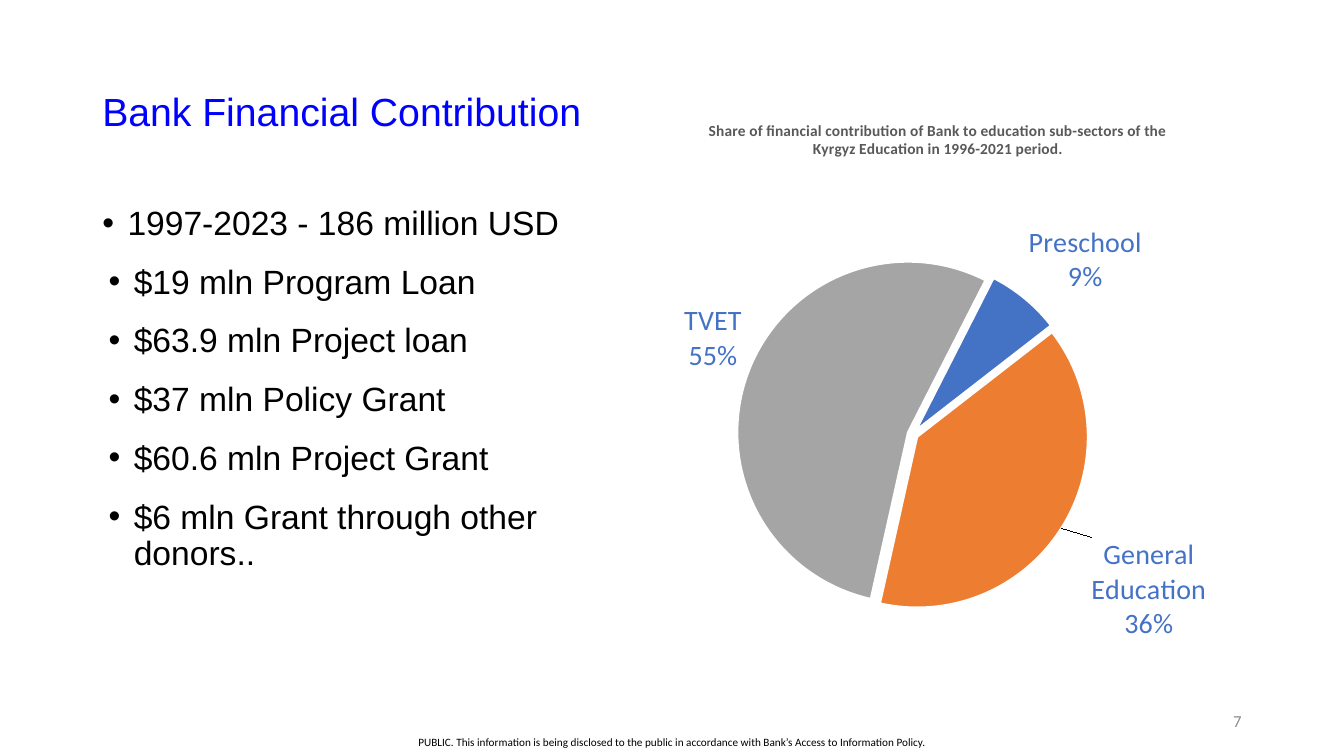
import pptx
import pptx.chart.data
import pptx.dml.color
import pptx.enum.chart
import pptx.enum.text
import pptx.oxml
import pptx.util

Pt = pptx.util.Pt
ALIGN = pptx.enum.text.PP_ALIGN
ANCHOR = pptx.enum.text.MSO_ANCHOR
CHART_NS = 'xmlns:c="http://schemas.openxmlformats.org/drawingml/2006/chart"'

BLUE = "4472C4"
AMOUNTS = [
    "1997-2023 - 186 million USD",
    "$19 mln Program Loan",
    "$63.9 mln Project loan",
    "$37 mln Policy Grant",
    "$60.6 mln Project Grant",
    "$6 mln Grant through other donors..",
]
# sub-sector, value, printed share, colour
SECTORS = [
    ("Preschool", 7, "9%", BLUE),
    ("General Education", 39, "36%", "ED7D31"),
    ("TVET", 54, "55%", "A5A5A5"),
]


def colour(value):
    return pptx.dml.color.RGBColor.from_string(value)


def apply(target, values):
    for name, value in values.items():
        setattr(target, name, value)


def set_font(font, name, size, shade, bold=False):
    apply(font, {"name": name, "size": Pt(size), "bold": bold})
    font.color.rgb = colour(shade)


def add_text(page, box, lines, font, frame_format=None, para_format=None, bullet_indents=None):
    """Text box with one paragraph per line; bullet_indents holds a left margin for each."""
    frame = page.shapes.add_textbox(*(Pt(length) for length in box)).text_frame
    apply(frame, {"word_wrap": True, **(frame_format or {})})
    for index, line in enumerate(lines):
        para = frame.paragraphs[0] if index == 0 else frame.add_paragraph()
        apply(para, para_format or {})
        if index == 0:
            para.space_before = Pt(0)
        if bullet_indents:
            properties = para._p.get_or_add_pPr()
            properties.set("marL", str(Pt(bullet_indents[index])))
            properties.set("indent", str(Pt(-18)))
            for tag, key, value in (("buFont", "typeface", "Arial"), ("buChar", "char", "•")):
                bullet = properties.makeelement(pptx.oxml.ns.qn("a:" + tag), {key: value})
                properties.append(bullet)
        span = para.add_run()
        span.text = line
        set_font(span.font, *font)


def set_layout(parent, index, **lengths):
    """Manual placement, in fractions of the chart."""
    parts = "".join(f'<c:{name} val="{value}"/>' for name, value in lengths.items())
    layout = pptx.oxml.parse_xml(
        f"<c:layout {CHART_NS}><c:manualLayout>{parts}</c:manualLayout></c:layout>")
    for old in parent.findall(pptx.oxml.ns.qn("c:layout")):
        parent.remove(old)
    parent.insert(index, layout)


def add_share_pie(page, box):
    data = pptx.chart.data.CategoryChartData()
    data.categories = [sector[0] for sector in SECTORS]
    data.add_series("Series 1", [sector[1] for sector in SECTORS])
    chart = page.shapes.add_chart(
        pptx.enum.chart.XL_CHART_TYPE.PIE, *(Pt(length) for length in box), data).chart
    chart.has_legend = False
    set_font(chart.font, "Calibri", 10, "000000")

    # Chart title
    chart.has_title = True
    title = chart.chart_title.text_frame
    title.text = ("Share of financial contribution of Bank to education sub-sectors "
                  "of the Kyrgyz Education in 1996-2021 period.")
    set_font(title.paragraphs[0].runs[0].font, "Calibri", 11, "595959", True)

    # Pie placement, rotation and spread
    plot = chart.plots[0]
    plot.vary_by_categories = True
    set_layout(plot._element.getparent(), 0, layoutTarget="inner", xMode="edge",
               yMode="edge", x=0.18, y=0.27, w=0.56, h=0.61)
    start = plot._element.makeelement(pptx.oxml.ns.qn("c:firstSliceAng"), {"val": "27"})
    for old in plot._element.findall(start.tag):
        plot._element.remove(old)
    plot._element.append(start)
    series = plot.series[0]
    explosion = series._element.makeelement(pptx.oxml.ns.qn("c:explosion"), {"val": "3"})
    series.format.fill.solid()
    series._element.find(pptx.oxml.ns.qn("c:spPr")).addnext(explosion)

    # Slices and their labels
    for index, (name, _, share, shade) in enumerate(SECTORS):
        point = series.points[index]
        point.format.fill.solid()
        point.format.fill.fore_color.rgb = colour(shade)
        point.format.line.color.rgb = colour("FFFFFF")
        point.format.line.width = Pt(1.5)
        label = point.data_label
        label.text_frame.text = f"{name}\n{share}"
        for para in label.text_frame.paragraphs:
            set_font(para.runs[0].font, "Calibri", 20, BLUE)
        label.position = pptx.enum.chart.XL_LABEL_POSITION.OUTSIDE_END
    labels = series.data_labels
    set_font(labels.font, "Calibri", 20, BLUE)
    apply(labels, {"show_percentage": True, "show_category_name": True, "show_value": False})
    set_layout(labels._element.findall(pptx.oxml.ns.qn("c:dLbl"))[1], 1, x=0.04, y=0.01)


def add_contribution_slide(deck):
    page = deck.slides.add_slide(deck.slide_layouts[6])
    width, height = deck.slide_width.pt, deck.slide_height.pt
    margin = 66

    # Heading and amounts
    add_text(page, (margin, 28.75, width - 2 * margin, 104.4), ["Bank Financial Contribution"],
             ("Arial", 28, "0000FF"), {"vertical_anchor": ANCHOR.MIDDLE}, {"line_spacing": 0.9})
    add_text(page, (margin, 144, 345, 342.7), AMOUNTS, ("Arial", 24, "000000"), None,
             {"line_spacing": 0.9, "space_before": Pt(10), "space_after": Pt(6)},
             [18] + [22.5] * (len(AMOUNTS) - 1))

    # Pie chart
    add_share_pie(page, (445.7, 71.3, 448.6, 415.4))

    # Page number and disclosure line
    add_text(page, (width - margin - 216, height - 39.6, 216, 28.75), ["7"],
             ("Calibri", 12, "8C8C8C"), {"vertical_anchor": ANCHOR.MIDDLE},
             {"alignment": ALIGN.RIGHT})
    insets = dict.fromkeys(("margin_left", "margin_top", "margin_right", "margin_bottom"), 0)
    add_text(page, (298.8, height - 14.4, 363.6, 9.4),
             ["PUBLIC. This information is being disclosed to the public in accordance "
              "with Bank’s Access to Information Policy."],
             ("Calibri", 8, "000000"), {**insets, "word_wrap": False})


def main():
    deck = pptx.Presentation()
    apply(deck, {"slide_width": Pt(960), "slide_height": Pt(540)})
    add_contribution_slide(deck)
    deck.save("out.pptx")


if __name__ == "__main__":
    main()
